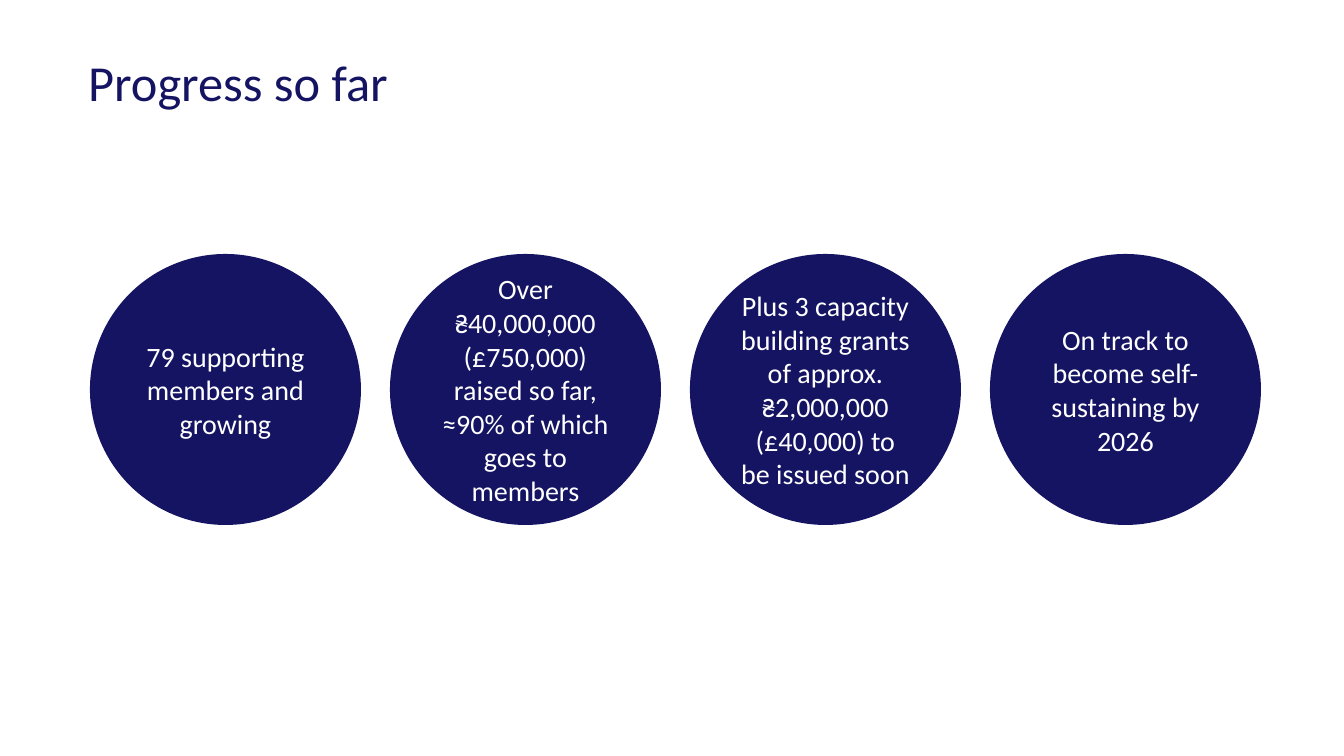
"""Build the progress slide: a title above four evenly spaced milestone circles."""
from dataclasses import dataclass

from pptx import Presentation
from pptx.dml.color import RGBColor
from pptx.enum.shapes import MSO_SHAPE as Shape
from pptx.enum.text import MSO_ANCHOR as Anchor, MSO_AUTO_SIZE as AutoSize, PP_ALIGN as Align
from pptx.slide import Slide
from pptx.text.text import TextFrame
from pptx.util import Emu, Pt

EMU_PER_PX = 914400 / 100.8


@dataclass(frozen=True)
class Theme:
    font: str = "Calibri"
    navy: RGBColor = RGBColor(0x15, 0x14, 0x62)
    white: RGBColor = RGBColor(0xFF, 0xFF, 0xFF)
    title_size: int = 36
    body_size: int = 20
    outline: int = 10


@dataclass(frozen=True)
class Milestone:
    text: str
    left: int
    top: int = 261
    diameter: int = 257


THEME = Theme()
FIRST_LEFT, PITCH = 97, 300
MESSAGES = (
    "79 supporting members and growing",
    "Over ₴40,000,000 (£750,000) raised so far, ≈90% of which goes to members",
    "Plus 3 capacity building grants of approx. ₴2,000,000 (£40,000) to be issued soon",
    "On track to become self-sustaining by 2026",
)
MILESTONES = [Milestone(text, FIRST_LEFT + i * PITCH) for i, text in enumerate(MESSAGES)]


def px(n: int) -> Emu:
    return Emu(round(n * EMU_PER_PX))


def write(tf: TextFrame, text: str, size: int, color: RGBColor, align: Align) -> None:
    p = tf.paragraphs[0]
    p.alignment = align
    r = p.add_run()
    r.text = text
    r.font.name = THEME.font
    r.font.size = Pt(size)
    r.font.color.rgb = color


def add_title(s: Slide, text: str) -> None:
    title = s.shapes.title
    title.left, title.top, title.width, title.height = px(19), px(46), px(379), px(72)
    tf = title.text_frame
    tf.word_wrap = True
    tf.auto_size = AutoSize.SHAPE_TO_FIT_TEXT
    tf.vertical_anchor = Anchor.TOP
    write(tf, text, THEME.title_size, THEME.navy, Align.RIGHT)


def add_milestone(s: Slide, m: Milestone) -> None:
    sp = s.shapes.add_shape(Shape.OVAL, px(m.left), px(m.top), px(m.diameter), px(m.diameter))
    sp.shadow.inherit = False
    sp.fill.solid()
    sp.fill.fore_color.rgb = THEME.navy
    sp.line.color.rgb = THEME.navy
    sp.line.width = Pt(THEME.outline)
    tf = sp.text_frame
    tf.word_wrap = True
    tf.vertical_anchor = Anchor.MIDDLE
    tf.margin_left = tf.margin_top = tf.margin_right = tf.margin_bottom = px(4)
    write(tf, m.text, THEME.body_size, THEME.white, Align.CENTER)


def main() -> None:
    prs = Presentation()
    prs.slide_width, prs.slide_height = px(1344), px(756)
    s = prs.slides.add_slide(prs.slide_layouts[5])
    add_title(s, "Progress so far")
    for m in MILESTONES:
        add_milestone(s, m)
    prs.save("out.pptx")


if __name__ == "__main__":
    main()
